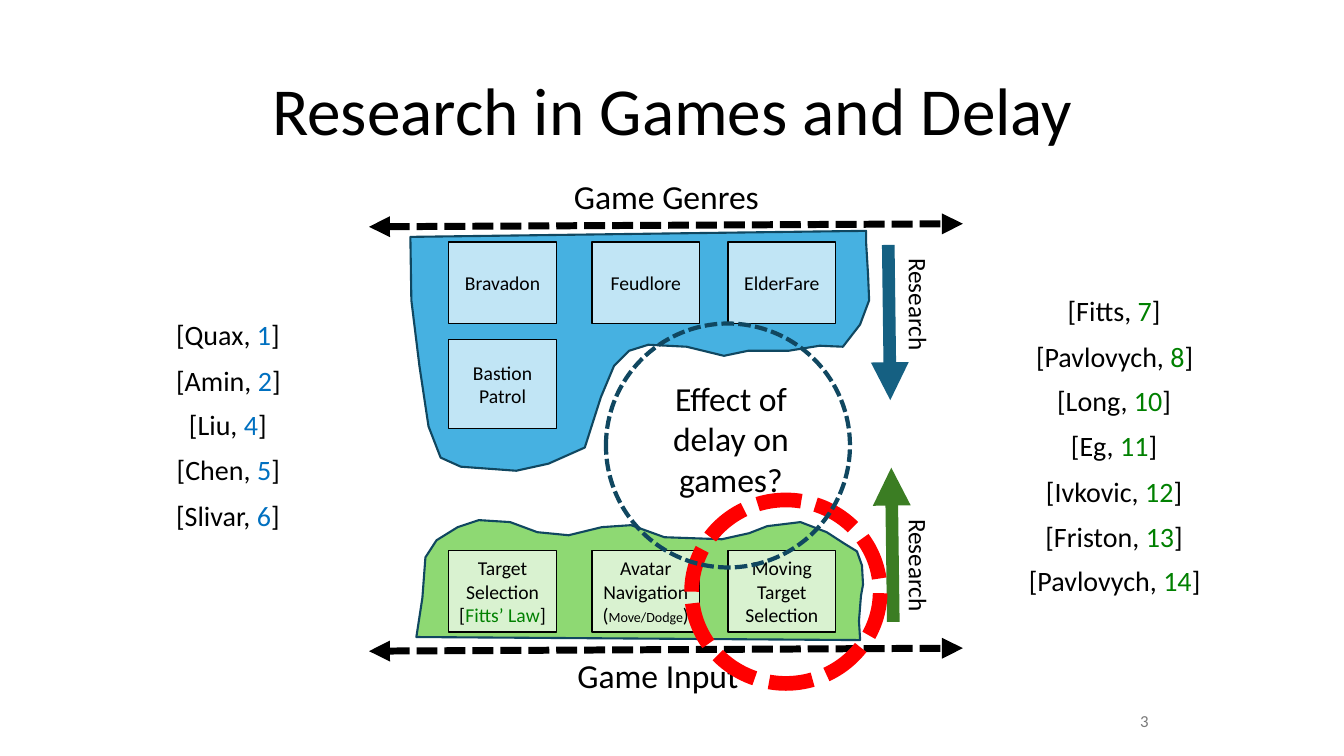
from lxml.etree import SubElement
from pptx import Presentation
from pptx.dml.color import RGBColor
from pptx.enum.dml import MSO_LINE
from pptx.enum.shapes import MSO_CONNECTOR, MSO_SHAPE
from pptx.enum.text import MSO_ANCHOR as Anchor, PP_ALIGN as Align
from pptx.oxml.ns import qn
from pptx.util import Pt

PX = 9144
BLACK, RED, NAVY = "000000", "FF0000", "104760"
CITE_BLUE, CITE_GREEN = "0070C0", "008000"
GENRE_FILL, GENRE_BOX, GENRE_ARROW = "46B1E1", "C1E5F5", "156082"
INPUT_FILL, INPUT_BOX, INPUT_ARROW = "8ED973", "D9F2D0", "3B7D23"


def px(*lengths):
    return [length * PX for length in lengths]


def rgb(value):
    return RGBColor.from_string(value)


class SlideBuilder:
    font = "Calibri"

    def __init__(self, slide):
        self.slide = slide

    def fill_text(self, frame, paragraphs, size, colour=BLACK,
                  align=Align.CENTER, anchor=Anchor.MIDDLE, wrap=True):
        frame.word_wrap = wrap
        frame.vertical_anchor = anchor
        for index, runs in enumerate(paragraphs):
            paragraph = frame.add_paragraph() if index else frame.paragraphs[0]
            paragraph.alignment = align
            paragraph.font.name = self.font
            paragraph.font.size = Pt(size)
            paragraph.font.color.rgb = rgb(colour)
            for text, *style in runs:
                run = paragraph.add_run()
                run.text = text
                if style:
                    run_colour, run_size = style
                    run.font.color.rgb = rgb(run_colour)
                    run.font.size = Pt(run_size)

    def title(self, text, box, size):
        title = self.slide.shapes.title
        title.left, title.top, title.width, title.height = px(*box)
        self.fill_text(title.text_frame, [[(text,)]], size)
        title.text_frame.paragraphs[0].line_spacing = 0.9

    def text(self, runs, box, size, rotation=0, **style):
        shape = self.slide.shapes.add_textbox(*px(*box))
        shape.rotation = rotation
        self.fill_text(shape.text_frame, [runs], size, **style)

    def outline(self, shape, fill, line, width):
        shape.shadow.inherit = False
        if fill:
            shape.fill.solid()
            shape.fill.fore_color.rgb = rgb(fill)
        else:
            shape.fill.background()
        shape.line.color.rgb = rgb(line)
        shape.line.width = Pt(width)

    def card(self, paragraphs, box, fill):
        shape = self.slide.shapes.add_shape(MSO_SHAPE.RECTANGLE, *px(*box))
        self.outline(shape, fill, BLACK, 1)
        self.fill_text(shape.text_frame, paragraphs, 14)

    def region(self, points, fill):
        builder = self.slide.shapes.build_freeform(*points[0], scale=PX)
        builder.add_line_segments(points[1:], close=True)
        self.outline(builder.convert_to_shape(), fill, NAVY, 1.5)

    def ring(self, box, colour, width):
        shape = self.slide.shapes.add_shape(MSO_SHAPE.OVAL, *px(*box))
        self.outline(shape, None, colour, width)
        shape.line.dash_style = MSO_LINE.SQUARE_DOT

    def arrow(self, start, end, colour, width, two_way=False):
        connector = self.slide.shapes.add_connector(
            MSO_CONNECTOR.STRAIGHT, *px(*start, *end))
        connector.line.color.rgb = rgb(colour)
        connector.line.width = Pt(width)
        if two_way:
            connector.line.dash_style = MSO_LINE.SQUARE_DOT
        properties = connector.element.spPr
        line = properties.find(qn("a:ln"))
        for end_name in ["a:headEnd", "a:tailEnd"] if two_way else ["a:tailEnd"]:
            SubElement(line, qn(end_name), type="triangle")
        SubElement(properties, qn("a:effectLst"))

    def citations(self, entries, centre, top, colour):
        for row, (author, number, width) in enumerate(entries):
            box = (centre - width // 2, top + round(row * 44.7), width, 44)
            runs = [(f"[{author}, ",), (number, colour, 20), ("]",)]
            self.text(runs, box, 20, wrap=False)


INPUT_REGION = [
    (413, 632), (419, 593), (422, 553), (433, 536), (454, 523), (475, 516),
    (506, 518), (533, 528), (564, 531), (597, 523), (626, 521), (659, 533),
    (688, 534), (716, 535), (743, 529), (761, 522), (794, 518), (820, 528),
    (837, 539), (850, 547), (855, 561), (856, 580), (854, 591), (852, 616),
    (853, 632), (853, 635)]
GENRE_REGION = [
    (407, 235), (408, 298), (416, 363), (425, 423), (437, 454), (457, 463),
    (512, 467), (544, 460), (580, 444), (596, 394), (609, 363), (624, 348),
    (643, 342), (681, 344), (718, 353), (742, 348), (782, 348), (813, 343),
    (836, 344), (853, 322), (862, 298), (861, 273), (859, 240), (859, 229)]
COLUMNS = [445, 587, 722]
INPUT_CARDS = [
    [[("Target Selection",)],
     [("[",), ("Fitts’ Law", CITE_GREEN, 14), ("]",)]],
    [[("Avatar Navigation",)],
     [("(",), ("Move/Dodge", BLACK, 10), (")",)]],
    [[("Moving Target Selection",)]]]
GENRE_CARDS = ["Bravadon", "Feudlore", "ElderFare"]
GENRE_CITATIONS = [
    ("Quax", "1", 124), ("Amin", "2", 125), ("Liu", "4", 98),
    ("Chen", "5", 123), ("Slivar", "6", 124)]
INPUT_CITATIONS = [
    ("Fitts", "7", 114), ("Pavlovych", "8", 177), ("Long", "10", 134),
    ("Eg", "11", 106), ("Ivkovic", "12", 156), ("Friston", "13", 158),
    ("Pavlovych", "14", 191)]


def main():
    presentation = Presentation()
    presentation.slide_width, presentation.slide_height = px(1333, 750)
    slide = presentation.slides.add_slide(presentation.slide_layouts[5])
    builder = SlideBuilder(slide)

    builder.title("Research in Games and Delay", (92, 40, 1150, 145), 48)
    builder.text([("3",)], (942, 695, 207, 40), 12, colour="797979",
                 align=Align.RIGHT)
    builder.text([("Effect of delay on games?",)], (646, 370, 158, 131), 24,
                 anchor=Anchor.TOP)

    builder.region(INPUT_REGION, INPUT_FILL)
    for left, paragraphs in zip(COLUMNS, INPUT_CARDS):
        builder.card(paragraphs, (left, 546, 107, 81), INPUT_BOX)
    builder.text([("Game Input",)], (562, 645, 181, 50), 24, wrap=False)
    builder.arrow((886, 617), (884, 464), INPUT_ARROW, 9)
    builder.text([("Research",)], (855, 541, 113, 40), 18, rotation=90,
                 wrap=False)
    builder.arrow((366, 646), (955, 643), BLACK, 5, two_way=True)
    builder.ring((686, 496, 187, 182), RED, 10.5)

    builder.region(GENRE_REGION, GENRE_FILL)
    for left, name in zip(COLUMNS, GENRE_CARDS):
        builder.card([[(name,)]], (left, 240, 107, 81), GENRE_BOX)
    builder.card([[("Bastion Patrol",)]], (COLUMNS[0], 337, 107, 88), GENRE_BOX)
    builder.arrow((366, 225), (955, 222), BLACK, 5, two_way=True)
    builder.arrow((881, 243), (883, 397), GENRE_ARROW, 9)
    builder.text([("Research",)], (855, 282, 113, 40), 18, rotation=90,
                 wrap=False)
    builder.text([("Game Genres",)], (558, 170, 206, 50), 24, wrap=False)

    builder.citations(INPUT_CITATIONS, 1105, 286, CITE_GREEN)
    builder.citations(GENRE_CITATIONS, 226, 310, CITE_BLUE)
    builder.ring((601, 321, 242, 242), NAVY, 3)

    presentation.save("out.pptx")


if __name__ == "__main__":
    main()
